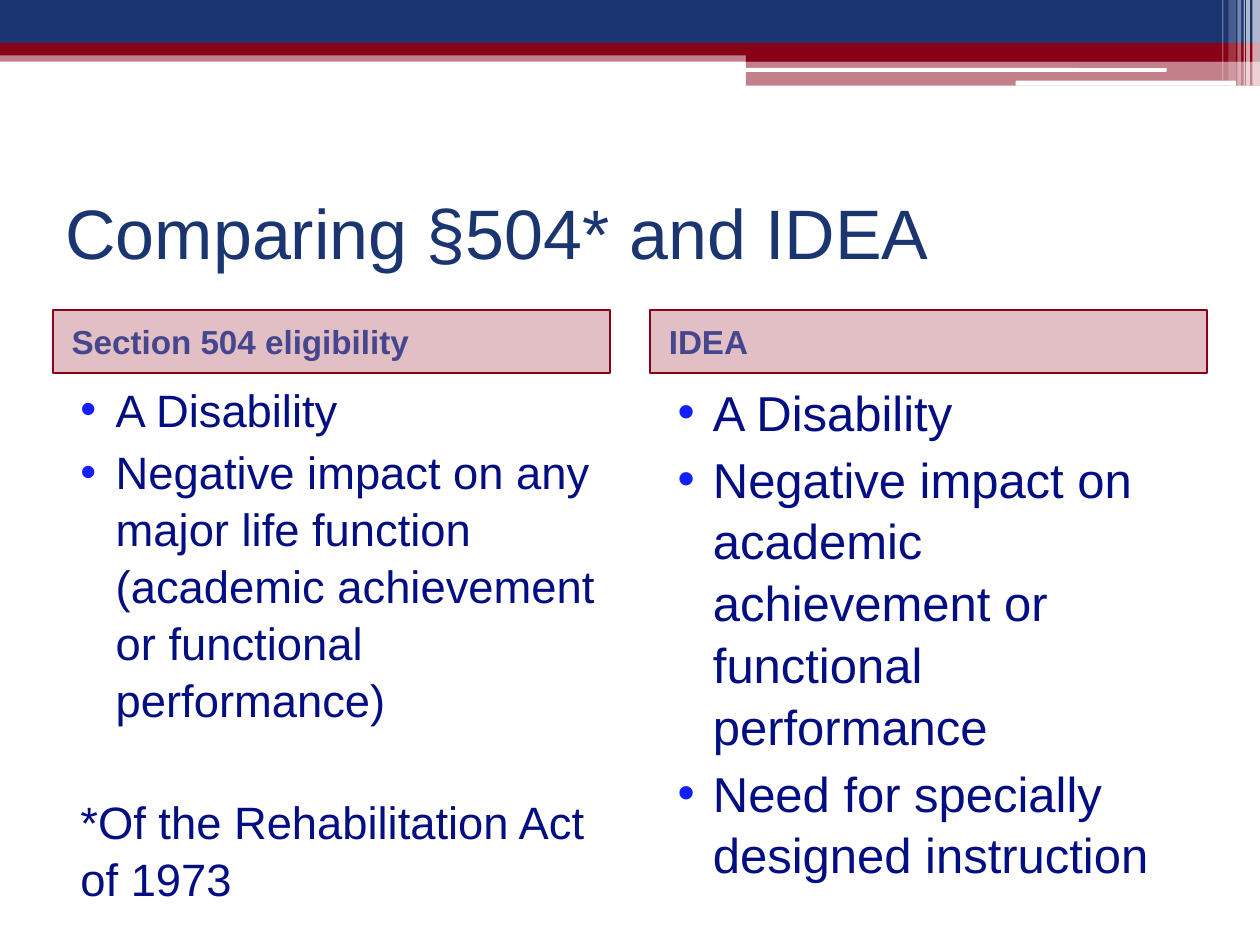
from lxml.etree import SubElement
from pptx import Presentation
from pptx.dml.color import RGBColor
from pptx.enum.shapes import MSO_SHAPE as Shape
from pptx.enum.text import MSO_ANCHOR as Anchor, PP_ALIGN as Align
from pptx.oxml.ns import qn
from pptx.util import Inches, Pt

# Content
TITLE = "Comparing §504* and IDEA"
COLUMNS = [
    {"heading": "Section 504 eligibility", "size": 25.9,
     "bullets": ["A Disability",
                 "Negative impact on any major life function "
                 "(academic achievement or functional performance)"],
     "note": "*Of the Rehabilitation Act of 1973"},
    {"heading": "IDEA", "size": 28,
     "bullets": ["A Disability",
                 "Negative impact on academic achievement or functional performance",
                 "Need for specially designed instruction"],
     "note": None},
]

# Style
FONT = "Arial"
NAVY, RED, WHITE = "1B3571", "890116", "FFFFFF"
HEADING_FILL, HEADING_TEXT = "8A0015", "45468D"
BODY_TEXT, BULLET = "030E83", "121FFF"

# Grid, in inches
WIDTH, HEIGHT = 10, 7.5
MARGIN, COLUMN_WIDTH = 0.42, 4.42
COLUMN_STEP = WIDTH - 2 * MARGIN - COLUMN_WIDTH
HEADING_TOP, HEADING_HEIGHT, BODY_HEIGHT = 2.46, 0.5, 4.25
STEP_LEFT = 5.92

# Banner bands: left, top, width, height, colour, opacity
BANDS = [
    (0, 0.4, WIDTH, 0.09, RED, 50),
    (0, 0, WIDTH, 0.34, NAVY, 100),
    (0, 0.34, WIDTH, 0.1, RED, 100),
    (STEP_LEFT, 0.39, WIDTH - STEP_LEFT, 0.1, RED, 100),
    (STEP_LEFT, 0.48, WIDTH - STEP_LEFT, 0.2, RED, 50),
]
SLOTS = [(5.91, 0.54, 3.35, 0.03), (8.06, 0.64, 1.75, 0.04)]
# Stripes at the right edge: left, width, height, opacity
STRIPES = [(9.94, 0.06, 0.68, 65), (9.89, 0.03, 0.68, 65), (9.87, 0.01, 0.68, 60),
           (9.82, 0.03, 0.68, 40), (9.75, 0.06, 0.64, 20), (9.7, 0.01, 0.64, 30)]


def color(value):
    return RGBColor.from_string(value)


def add_block(slide, box, fill, opacity=100, kind=Shape.RECTANGLE):
    shape = slide.shapes.add_shape(kind, *map(Inches, box))
    shape.shadow.inherit = False
    shape.line.fill.background()
    shape.fill.solid()
    shape.fill.fore_color.rgb = color(fill)
    if opacity < 100:
        fill_color = shape.fill._xPr.find(qn("a:solidFill"))[0]
        SubElement(fill_color, qn("a:alpha"), val=str(opacity * 1000))
    return shape


def format_paragraph(paragraph, size, text_color, bold=False, before=3, left=0, hanging=0):
    paragraph.alignment = Align.LEFT
    paragraph.space_before = Pt(before)
    properties = paragraph._p.get_or_add_pPr()
    properties.set("marL", str(Inches(left)))
    properties.set("indent", str(-Inches(hanging)))
    for run in paragraph.runs:
        run.font.name, run.font.size, run.font.bold = FONT, Pt(size), bold
        run.font.color.rgb = color(text_color)


def add_bullet(paragraph):
    properties = paragraph._p.get_or_add_pPr()
    bullet_color = SubElement(properties, qn("a:buClr"))
    SubElement(bullet_color, qn("a:srgbClr"), val=BULLET)
    SubElement(properties, qn("a:buFont"), typeface=FONT)
    SubElement(properties, qn("a:buChar"), char="•")


def add_banner(slide):
    for *box, fill, opacity in BANDS:
        add_block(slide, box, fill, opacity)
    for box in SLOTS:
        add_block(slide, box, WHITE, kind=Shape.ROUNDED_RECTANGLE)
    for left, width, height, opacity in STRIPES:
        add_block(slide, (left, 0, width, height), WHITE, opacity)


def add_title(slide):
    title = slide.shapes.title
    title.left, title.top, title.width, title.height = map(
        Inches, (MARGIN, 1.25, WIDTH - 2 * MARGIN, 1.17))
    title.text_frame.text = TITLE
    title.text_frame.vertical_anchor = Anchor.MIDDLE
    format_paragraph(title.text_frame.paragraphs[0], 40, NAVY, before=0)


def add_column(slide, left, column):
    # Heading bar
    heading = add_block(slide, (left, HEADING_TOP, COLUMN_WIDTH, HEADING_HEIGHT),
                        HEADING_FILL, 25)
    heading.line.color.rgb = color(RED)
    heading.line.width = Pt(1)
    heading.text_frame.text = column["heading"]
    heading.text_frame.vertical_anchor = Anchor.MIDDLE
    format_paragraph(heading.text_frame.paragraphs[0], 19, HEADING_TEXT, True, left=0.05)

    # Bullets, then the footnote set one line lower
    body = slide.shapes.add_textbox(*map(Inches, (
        left, HEADING_TOP + HEADING_HEIGHT, COLUMN_WIDTH, BODY_HEIGHT)))
    frame, size = body.text_frame, column["size"]
    frame.word_wrap = True
    note = column["note"]
    frame.text = "\n".join(column["bullets"] + ([note] if note else []))
    for paragraph in frame.paragraphs:
        paragraph.line_spacing = 1.05
        if paragraph.text == note:
            format_paragraph(paragraph, size, BODY_TEXT, before=37, left=0.12)
        else:
            format_paragraph(paragraph, size, BODY_TEXT, left=0.4, hanging=0.28)
            add_bullet(paragraph)


def main():
    presentation = Presentation()
    presentation.slide_width, presentation.slide_height = Inches(WIDTH), Inches(HEIGHT)
    slide = presentation.slides.add_slide(presentation.slide_layouts[5])
    add_banner(slide)
    add_title(slide)
    for index, column in enumerate(COLUMNS):
        add_column(slide, MARGIN + index * COLUMN_STEP, column)
    presentation.save("out.pptx")


if __name__ == "__main__":
    main()
